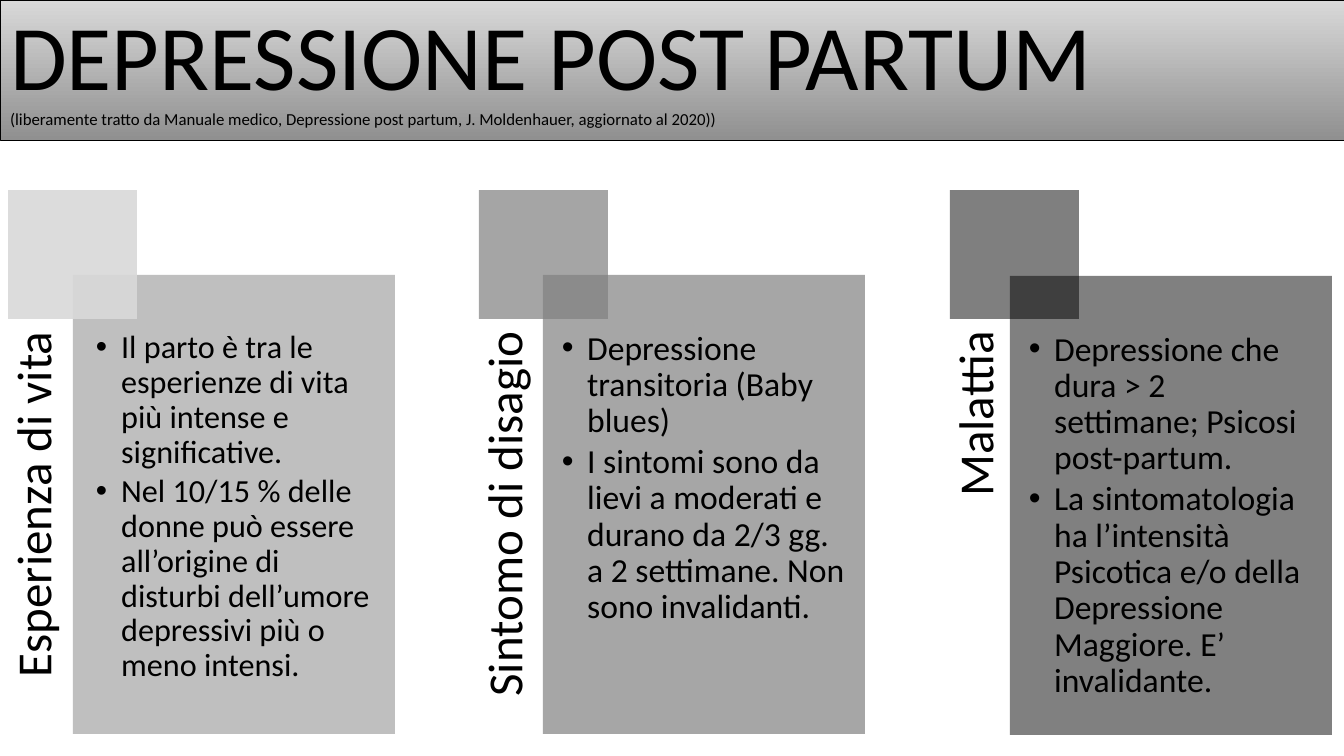
from pptx import Presentation
from pptx import util as u
from pptx.dml.color import RGBColor
from pptx.enum import shapes, text
from pptx.oxml.ns import qn
from lxml import etree

HEX = {"ink": "000000", "light": "D9D9D9", "dark": "909090",
       "pale": "BFBFBF", "mid": "A6A6A6", "gray": "808080"}
FONT = "Calibri"

TITLE = "DEPRESSIONE POST PARTUM"
NOTE = ("(liberamente tratto da Manuale medico, Depressione post partum, "
        "J. Moldenhauer, aggiornato al 2020))")

COLS = [
    {"label": "Esperienza di vita", "panel": "pale", "at": (73, 275),
     "square": ("light", 90), "size": 23, "pad": 23,
     "items": ["Il parto è tra le esperienze di vita più intense e significative.",
               "Nel 10/15 % delle donne può essere all’origine di disturbi "
               "dell’umore depressivi più o meno intensi."]},
    {"label": "Sintomo di disagio", "panel": "mid", "at": (543, 275),
     "square": ("gray", 70), "size": 24, "pad": 19,
     "items": ["Depressione transitoria (Baby blues)",
               "I sintomi sono da lievi a moderati e durano da 2/3 gg. "
               "a 2 settimane. Non sono invalidanti."]},
    {"label": "Malattia", "panel": "gray", "at": (1010, 276),
     "square": ("ink", 50), "size": 24, "pad": 19,
     "items": ["Depressione che dura > 2 settimane; Psicosi post-partum.",
               "La sintomatologia ha l’intensità Psicotica e/o della "
               "Depressione Maggiore. E’ invalidante."]},
]

WIDE, HIGH, BAR = 1344, 756, 140
LEFT, STEP, TOP, SIDE = 8, 471, 190, 129
PANEL_W, PANEL_H = 322, 459
LABEL_H, LABEL_X, LABEL_Y = 64, 33, 502
INSET = 56


def px(n):
    return round(n * 914400 / 100.8)


def rgb(name):
    return RGBColor.from_string(HEX[name])


def rect(x, y, w, h, fill=None):
    box = slide.shapes.add_shape(shapes.MSO_SHAPE.RECTANGLE, *map(px, (x, y, w, h)))
    box.shadow.inherit = False
    box.line.fill.background()
    if fill:
        box.fill.solid()
        box.fill.fore_color.rgb = rgb(fill)
    return box


def setup(box, pads, anchor=text.MSO_ANCHOR.TOP):
    """Set the margins (left, top, right, bottom), wrapping and anchor."""
    frame = box.text_frame
    form = dict(zip(("margin_left", "margin_top", "margin_right", "margin_bottom"),
                    map(px, pads)))
    form.update(word_wrap=True, vertical_anchor=anchor)
    for key, val in form.items():
        setattr(frame, key, val)
    return frame


def style(para, align=text.PP_ALIGN.LEFT, after=0):
    form = {"alignment": align, "line_spacing": 0.9,
            "space_before": u.Pt(0), "space_after": u.Pt(after)}
    for key, val in form.items():
        setattr(para, key, val)


def write(para, words, size):
    run = para.add_run()
    run.text = words
    for key, val in {"name": FONT, "size": u.Pt(size)}.items():
        setattr(run.font, key, val)
    run.font.color.rgb = rgb("ink")


def bullet(para):
    props = para._p.get_or_add_pPr()
    props.set("marL", str(u.Inches(0.25)))
    props.set("indent", str(-u.Inches(0.25)))
    etree.SubElement(props, qn("a:buFont"), typeface="Arial")
    etree.SubElement(props, qn("a:buChar"), char="•")


def fade(box, percent):
    """Make a solid fill partly opaque."""
    tone = box.fill._xPr.find(qn("a:solidFill"))[0]
    etree.SubElement(tone, qn("a:alpha"), val=str(percent * 1000))


def column(i, col):
    x = LEFT + i * STEP
    mid = x + LABEL_X
    label = slide.shapes.add_textbox(*map(px, (
        mid - PANEL_H / 2, LABEL_Y - LABEL_H / 2 + 3, PANEL_H, LABEL_H)))
    label.rotation = 270
    para = setup(label, (0, 0, INSET, 0)).paragraphs[0]
    style(para, text.PP_ALIGN.RIGHT)
    write(para, col["label"], 35)

    panel = rect(*col["at"], PANEL_W, PANEL_H, col["panel"])
    pad = col["pad"]
    frame = setup(panel, (pad, INSET, pad, pad))
    for n, item in enumerate(col["items"]):
        para = frame.add_paragraph() if n else frame.paragraphs[0]
        style(para, after=3.5)
        bullet(para)
        write(para, item, col["size"])

    tone, percent = col["square"]
    fade(rect(x, TOP, SIDE, SIDE, tone), percent)


def header():
    bar = rect(0, 0, WIDE, BAR)
    bar.fill.gradient()
    bar.fill.gradient_angle = 270
    for stop, tone in zip(bar.fill.gradient_stops, ("light", "dark")):
        stop.color.rgb = rgb(tone)
    bar.line.color.rgb = rgb("ink")
    bar.line.width = u.Pt(0.5)
    para = setup(bar, (10, 5, 10, 5), text.MSO_ANCHOR.MIDDLE).paragraphs[0]
    style(para)
    write(para, TITLE, 66)
    para.add_line_break()
    write(para, NOTE, 12)


deck = Presentation()
deck.slide_width, deck.slide_height = px(WIDE), px(HIGH)
slide = deck.slides.add_slide(deck.slide_layouts[6])
for i, col in enumerate(COLS):
    column(i, col)
header()
deck.save("out.pptx")
